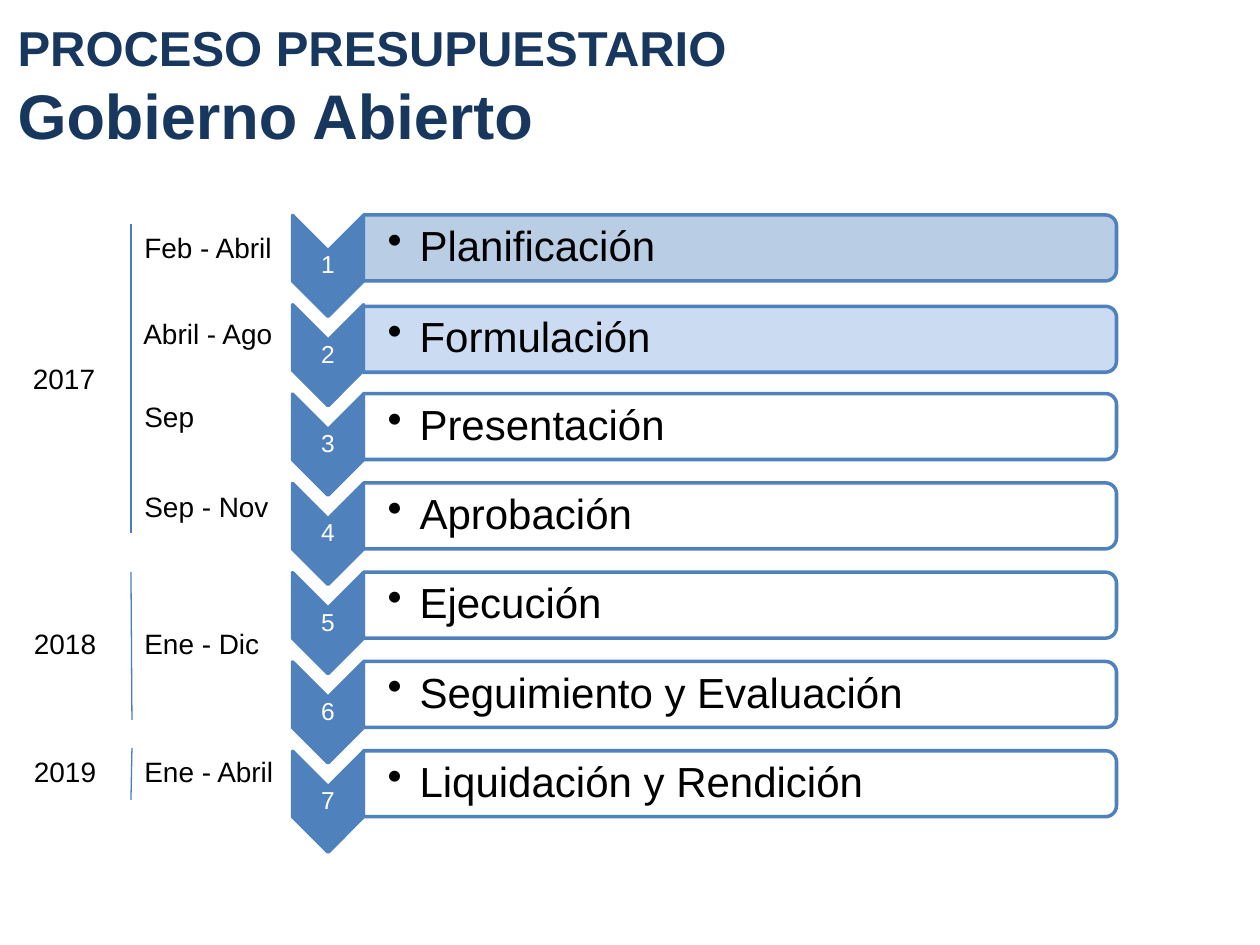
import pptx
import pptx.util
import pptx.dml.color
import pptx.enum.shapes
import pptx.enum.text
import pptx.oxml
import pptx.oxml.ns
from lxml import etree

SHAPE = pptx.enum.shapes.MSO_SHAPE
ALIGN = pptx.enum.text.PP_ALIGN
MIDDLE = pptx.enum.text.MSO_ANCHOR.MIDDLE
qn = pptx.oxml.ns.qn

BLUE, NAVY, WHITE, BLACK, RULE = "4F81BD", "17375E", "FFFFFF", "000000", "4B7EBC"
TITLE = [("PROCESO PRESUPUESTARIO", 28), ("Gobierno Abierto", 36)]
# name, bar fill, opacity in percent, downward shift of the bar
STEPS = [
    ("Planificación", "B9CDE5", 100, 0),
    ("Formulación", "C6D9F1", 90, 2),
    ("Presentación", WHITE, 90, 0),
    ("Aprobación", WHITE, 90, 0),
    ("Ejecución", WHITE, 90, 0),
    ("Seguimiento y Evaluación", WHITE, 90, 0),
    ("Liquidación y Rendición", WHITE, 90, 0),
]
# text, left, top
MONTHS = [
    ("Feb - Abril", 132, 224), ("Abril - Ago", 131, 310), ("Sep", 132, 393),
    ("Sep - Nov", 132, 483), ("Ene - Dic", 132, 620), ("Ene - Abril", 132, 748),
]
YEARS = [("2017", 5, 355), ("2018", 6, 620), ("2019", 6, 748)]
# x1, y1, x2, y2
YEAR_RULES = [(131, 224, 131, 533), (131, 572, 132, 720), (132, 748, 131, 800)]

CHEVRON_X, CHEVRON_Y, CHEVRON_LENGTH, CHEVRON_WIDTH = 328, 266, 101, 71
BAR_X, BAR_Y, BAR_LENGTH, BAR_HEIGHT = 740, 248, 753, 66
PITCH = 89.3


def px(length):
    return round(length * 914400 / 126)


def rgb(color):
    return pptx.dml.color.RGBColor.from_string(color)


def style(span, size, color, bold=None):
    span.font.name = "Arial"
    span.font.size = pptx.util.Pt(size)
    span.font.color.rgb = rgb(color)
    span.font.bold = bold


def add_turned(page, kind, center_x, center_y, width, height, fill, opacity=100):
    """Add a preset shape turned a quarter clockwise about its centre."""
    shape = page.shapes.add_shape(kind, px(center_x - width / 2), px(center_y - height / 2),
                                  px(width), px(height))
    shape.rotation = 90
    shape.shadow.inherit = False
    shape.fill.solid()
    shape.fill.fore_color.rgb = rgb(fill)
    if opacity < 100:
        color = shape.fill._xPr.find(".//" + qn("a:srgbClr"))
        etree.SubElement(color, qn("a:alpha"), val=str(opacity * 1000))
    shape.line.color.rgb = rgb(BLUE)
    shape.line.width = pptx.util.Pt(2)


def add_text(page, text, left, top, width, height, size, color=BLACK, align=ALIGN.LEFT,
             insets=None, bullet=False):
    box = page.shapes.add_textbox(px(left), px(top), px(width), px(height))
    frame = box.text_frame
    frame.word_wrap = True
    frame.text = text
    para = frame.paragraphs[0]
    para.alignment = align
    if insets:
        frame.vertical_anchor = MIDDLE
        (frame.margin_left, frame.margin_top,
         frame.margin_right, frame.margin_bottom) = map(px, insets)
        para.line_spacing = 0.9
    if bullet:
        properties = para._p.get_or_add_pPr()
        properties.set("marL", str(px(32)))
        properties.set("indent", str(-px(32)))
        etree.SubElement(properties, qn("a:buChar"), char="•")
    style(para.runs[0], size, color)


def add_title(page):
    title = page.shapes.title
    title.left, title.top, title.width, title.height = map(px, (5, 6, 833, 158))
    frame = title.text_frame
    frame.vertical_anchor = MIDDLE
    frame.text = "\v".join(text for text, size in TITLE)
    para = frame.paragraphs[0]
    para.alignment = ALIGN.LEFT
    for span, (text, size) in zip(para.runs, TITLE):
        style(span, size, NAVY, bold=True)
    etree.SubElement(para._p.find(qn("a:br")), qn("a:rPr"), sz="3600")


def add_step(page, index, name, fill, opacity, shift):
    chevron_y = CHEVRON_Y + index * PITCH
    bar_y = BAR_Y + index * PITCH + shift
    add_turned(page, SHAPE.CHEVRON, CHEVRON_X, chevron_y, CHEVRON_LENGTH, CHEVRON_WIDTH, BLUE)
    add_text(page, str(index + 1), CHEVRON_X - 35, chevron_y - 15, 70, 30, 14, WHITE,
             ALIGN.CENTER, (1, 1, 1, 1))
    add_turned(page, SHAPE.ROUND_2_SAME_RECTANGLE, BAR_X, bar_y, BAR_HEIGHT, BAR_LENGTH,
               fill, opacity)
    add_text(page, name, BAR_X - BAR_LENGTH / 2, bar_y - 30, BAR_LENGTH - 3, 60, 24,
             insets=(24, 3, 3, 3), bullet=True)


def add_rule(page, ends):
    rule = page.shapes.add_connector(pptx.enum.shapes.MSO_CONNECTOR.STRAIGHT, *map(px, ends))
    rule.line.color.rgb = rgb(RULE)
    rule.line.width = pptx.util.Pt(0.75)
    etree.SubElement(rule._element.spPr, qn("a:effectLst"))


def main():
    deck = pptx.Presentation()
    deck.slide_width, deck.slide_height = px(1260), px(945)
    page = deck.slides.add_slide(deck.slide_layouts[5])
    add_title(page)
    for index, step in enumerate(STEPS):
        add_step(page, index, *step)
    for text, left, top in MONTHS:
        add_text(page, text, left, top, 169, 47, 16)
    for ends in YEAR_RULES:
        add_rule(page, ends)
    for text, left, top in YEARS:
        add_text(page, text, left, top, 118, 47, 16, align=ALIGN.CENTER)
    deck.save("out.pptx")


if __name__ == "__main__":
    main()
